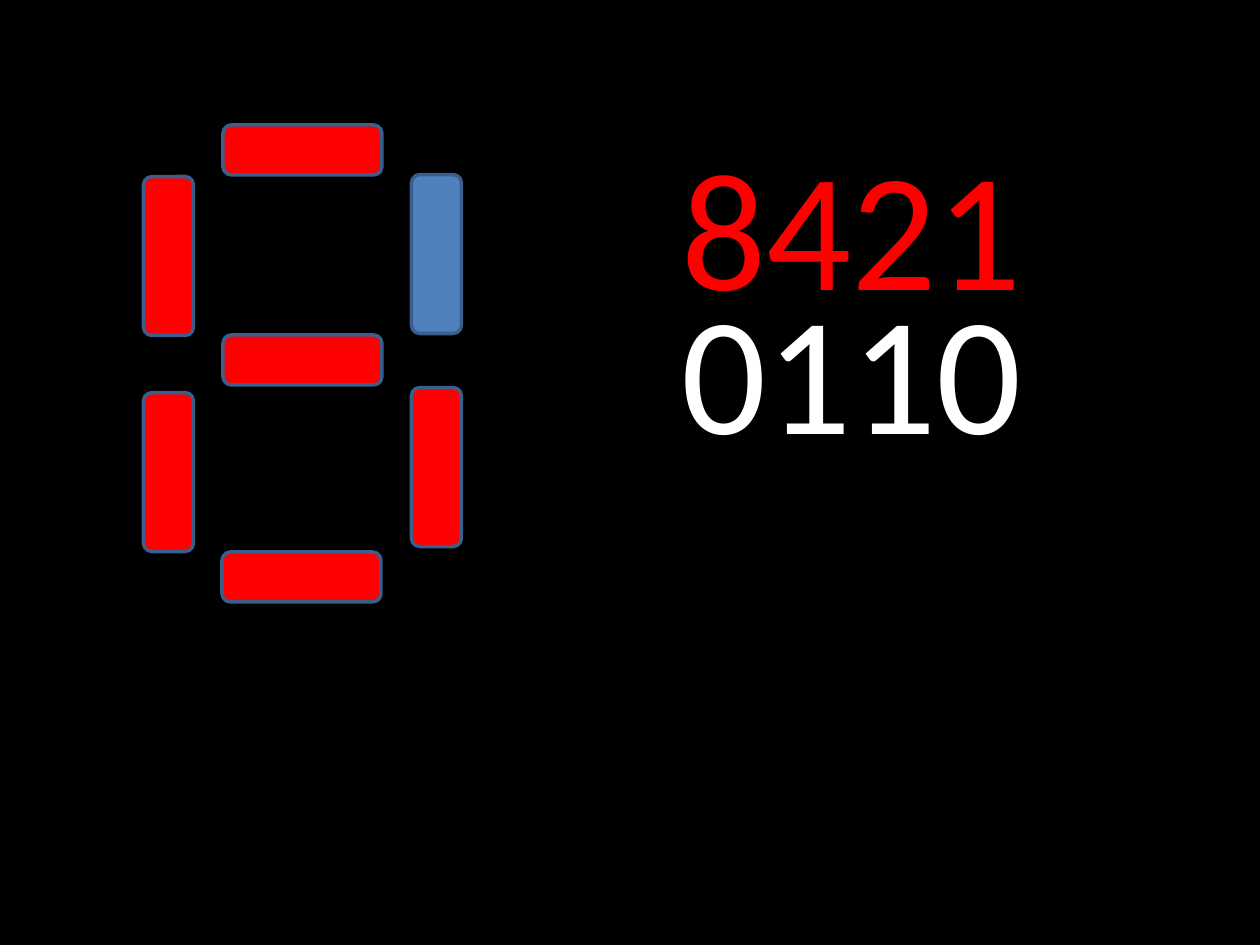
from pptx import Presentation
from pptx.dml.color import RGBColor
from pptx.enum.shapes import MSO_SHAPE
from pptx.enum.text import MSO_ANCHOR, MSO_AUTO_SIZE
from pptx.util import Emu, Pt

ROUNDED = MSO_SHAPE.ROUNDED_RECTANGLE
TOP = MSO_ANCHOR.TOP
FIT_SHAPE = MSO_AUTO_SIZE.SHAPE_TO_FIT_TEXT

PX_PER_INCH = 126
RED, BLUE, OUTLINE = "FF0000", "4F81BD", "3A5F8C"
BLACK, WHITE = "000000", "FFFFFF"


def px(length):
    return Emu(round(length * 914400 / PX_PER_INCH))


def color(hex_string):
    return RGBColor.from_string(hex_string)


presentation = Presentation()
presentation.slide_width, presentation.slide_height = px(1260), px(945)
slide = presentation.slides.add_slide(presentation.slide_layouts[6])

# Black background
background = slide.background.fill
background.solid()
background.fore_color.rgb = color(BLACK)

# Seven-segment digit: left, top, rotation, fill
SEGMENT_LENGTH, SEGMENT_THICKNESS = 159, 50
segments = [
    (223, 125, 0, RED),     # top
    (223, 335, 0, RED),     # middle
    (222, 552, 0, RED),     # bottom
    (357, 442, 270, RED),   # lower right
    (89, 447, 270, RED),    # lower left
    (357, 229, 270, BLUE),  # upper right, off
    (89, 231, 270, RED),    # upper left
]
for left, top, rotation, fill in segments:
    segment = slide.shapes.add_shape(
        ROUNDED, px(left), px(top), px(SEGMENT_LENGTH), px(SEGMENT_THICKNESS))
    segment.rotation = rotation
    segment.shadow.inherit = False
    segment.fill.solid()
    segment.fill.fore_color.rgb = color(fill)
    segment.line.color.rgb = color(OUTLINE)
    segment.line.width = Pt(2)

# Bit weights above the binary value: text, top, height, colour
frame_format = {"word_wrap": True, "auto_size": FIT_SHAPE, "vertical_anchor": TOP}
font_format = {"name": "Calibri", "size": Pt(96)}
for text, top, height, text_color in [
    ("8421", 116, 420, RED),
    ("0110", 260, 217, WHITE),
]:
    box = slide.shapes.add_textbox(px(669), px(top), px(486), px(height))
    for name, value in frame_format.items():
        setattr(box.text_frame, name, value)
    run = box.text_frame.paragraphs[0].add_run()
    run.text = text
    for name, value in font_format.items():
        setattr(run.font, name, value)
    run.font.color.rgb = color(text_color)

presentation.save("out.pptx")
